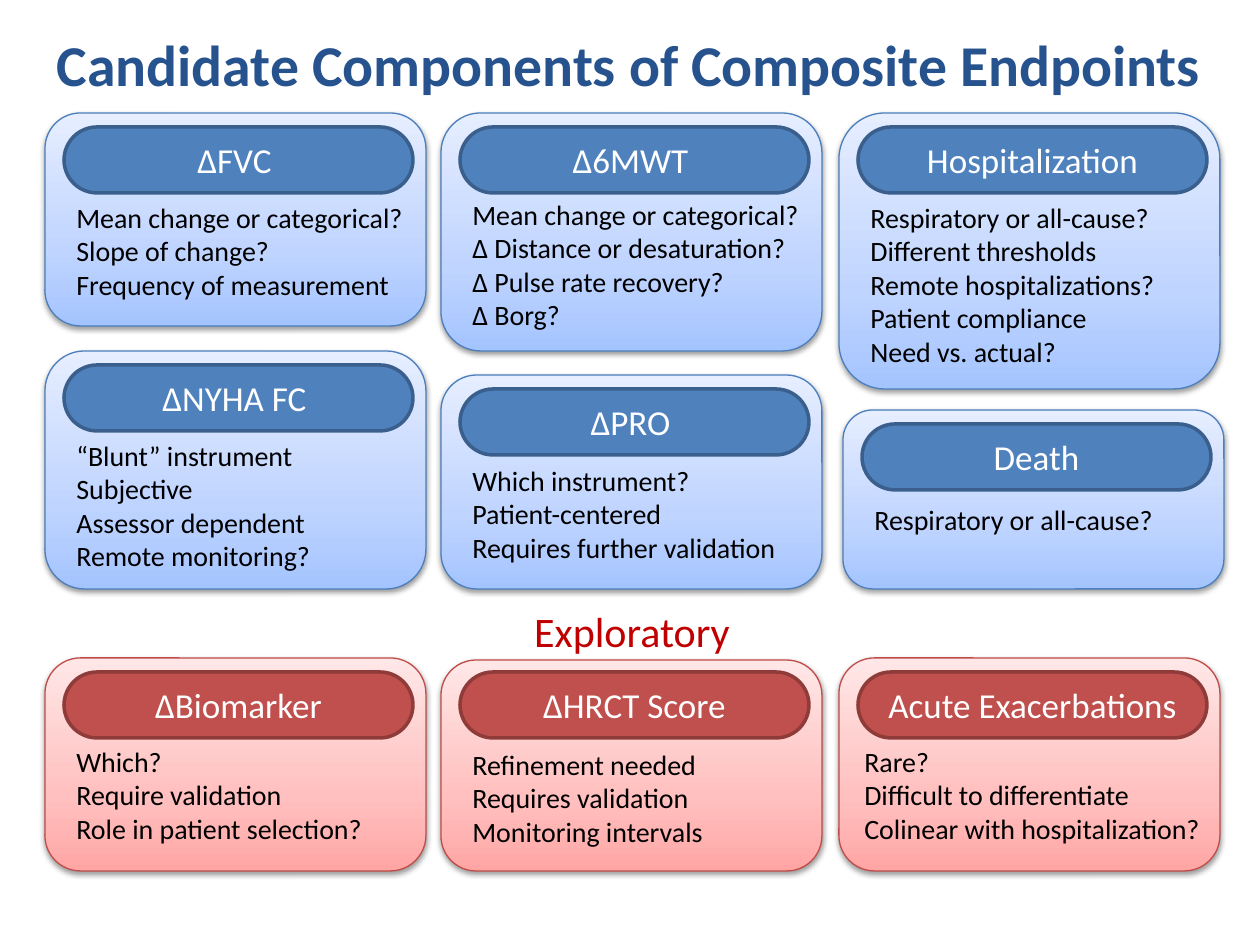
from copy import deepcopy

from lxml import etree
from pptx import Presentation
from pptx.dml.color import RGBColor
from pptx.enum.shapes import MSO_SHAPE
from pptx.enum.text import MSO_ANCHOR, PP_ALIGN
from pptx.oxml import parse_xml
from pptx.oxml.ns import nsdecls, qn
from pptx.util import Pt

ROUNDED = MSO_SHAPE.ROUNDED_RECTANGLE
MIDDLE, TOP = MSO_ANCHOR.MIDDLE, MSO_ANCHOR.TOP
CENTER, LEFT = PP_ALIGN.CENTER, PP_ALIGN.LEFT

PX = 914400 / 126
COLORS = {"title": "26528E", "body": "000000", "label": "FFFFFF", "exploratory": "C00000"}
THEMES = {
    "blue": {"stops": ["A4C4FF", "BFD4FF", "E6EEFF"], "edge": "4B7EBC",
             "pill": "4F81BD", "pill_edge": "3A5F8C"},
    "red": {"stops": ["FFA6A5", "FFC0BF", "FFE7E7"], "edge": "BF4C48",
            "pill": "C0504D", "pill_edge": "8E3B39"},
}
STOP_POSITIONS = [0, 0.35, 1]
PANEL_WIDTH, PILL_WIDTH, PILL_HEIGHT, PILL_INDENT = 381, 349, 66, 19
SHADOW = (f'<a:effectLst {nsdecls("a")}><a:outerShdw blurRad="40000" dist="20000" '
          'dir="5400000" rotWithShape="0"><a:srgbClr val="000000">'
          '<a:alpha val="38000"/></a:srgbClr></a:outerShdw></a:effectLst>')


def emu(*lengths):
    return [round(length * PX) for length in lengths]


def write(shape, lines, size, color, align=LEFT, anchor=TOP, bold=False):
    frame = shape.text_frame
    frame.word_wrap = True
    frame.vertical_anchor = anchor
    for index, line in enumerate(lines):
        para = frame.paragraphs[0] if index == 0 else frame.add_paragraph()
        para.alignment = align
        span = para.add_run()
        span.text = line
        span.font.name = "Calibri"
        span.font.size = Pt(size)
        span.font.bold = bold
        span.font.color.rgb = RGBColor.from_string(color)


deck = Presentation()
deck.slide_width, deck.slide_height = emu(1260, 945)
page = deck.slides.add_slide(deck.slide_layouts[5])

# Title
title = page.shapes.title
title.left, title.top, title.width, title.height = emu(38, 9, 1182, 109)
write(title, ["Candidate Components of Composite Endpoints"], 33, COLORS["title"],
      align=CENTER, anchor=MIDDLE, bold=True)

# Panels: theme, left, top, height, pill top, text left, text top, text width, label, lines
panels = [
    ("blue", 45, 113, 213, 127, 64, 194, 362, "ΔFVC ",
     ["Mean change or categorical?", "Slope of change?", "Frequency of measurement"]),
    ("blue", 441, 113, 238, 127, 460, 191, 370, "Δ6MWT ",
     ["Mean change or categorical?", "Δ Distance or desaturation?",
      "Δ Pulse rate recovery?", "Δ Borg?"]),
    ("blue", 839, 113, 276, 127, 858, 194, 358, "Hospitalization",
     ["Respiratory or all-cause?", "Different thresholds", "Remote hospitalizations?",
      "Patient compliance", "Need vs. actual?"]),
    ("blue", 45, 351, 238, 365, 64, 432, 362, "ΔNYHA FC ",
     ["“Blunt” instrument", "Subjective", "Assessor dependent", "Remote monitoring?"]),
    ("blue", 441, 375, 214, 389, 460, 457, 370, "ΔPRO ",
     ["Which instrument?", "Patient-centered", "Requires further validation"]),
    ("blue", 843, 410, 179, 424, 862, 496, 358, "Death", ["Respiratory or all-cause?"]),
    ("red", 45, 658, 213, 672, 64, 738, 362, "ΔBiomarker",
     ["Which?", "Require validation", "Role in patient selection?"]),
    ("red", 441, 660, 211, 672, 460, 741, 370, "ΔHRCT Score",
     ["Refinement needed", "Requires validation", "Monitoring intervals"]),
    ("red", 839, 658, 213, 672, 852, 738, 365, "Acute Exacerbations",
     ["Rare?", "Difficult to differentiate", "Colinear with hospitalization?"]),
]

for (theme_name, left, top, height, pill_top,
     text_left, text_top, text_width, label, lines) in panels:
    theme = THEMES[theme_name]

    # Gradient panel, darker at the bottom, with a soft shadow
    panel = page.shapes.add_shape(ROUNDED, *emu(left, top, PANEL_WIDTH, height))
    panel.fill.gradient()
    panel.fill.gradient_angle = 90
    properties = panel.fill._xPr
    stop_list = properties.find(".//" + qn("a:gsLst"))
    stop_list.append(deepcopy(stop_list[-1]))
    for stop, position, color in zip(panel.fill.gradient_stops, STOP_POSITIONS, theme["stops"]):
        stop.position = position
        stop.color.rgb = RGBColor.from_string(color)
    panel.line.color.rgb = RGBColor.from_string(theme["edge"])
    panel.line.width = Pt(0.75)
    properties.append(parse_xml(SHADOW))

    # Pill heading
    pill = page.shapes.add_shape(
        ROUNDED, *emu(left + PILL_INDENT, pill_top, PILL_WIDTH, PILL_HEIGHT))
    pill.adjustments[0] = 0.5
    pill.shadow.inherit = False
    pill.fill.solid()
    pill.fill.fore_color.rgb = RGBColor.from_string(theme["pill"])
    pill.line.color.rgb = RGBColor.from_string(theme["pill_edge"])
    pill.line.width = Pt(2)
    write(pill, [label], 20, COLORS["label"], align=CENTER, anchor=MIDDLE)

    # Considerations
    box = page.shapes.add_textbox(
        *emu(text_left, text_top, text_width, 12 + 34 * len(lines)))
    write(box, lines, 16, COLORS["body"])

# Heading of the lower row
heading = page.shapes.add_textbox(*emu(493, 599, 278, 158))
write(heading, ["Exploratory"], 24, COLORS["exploratory"], align=CENTER)

deck.save("out.pptx")
